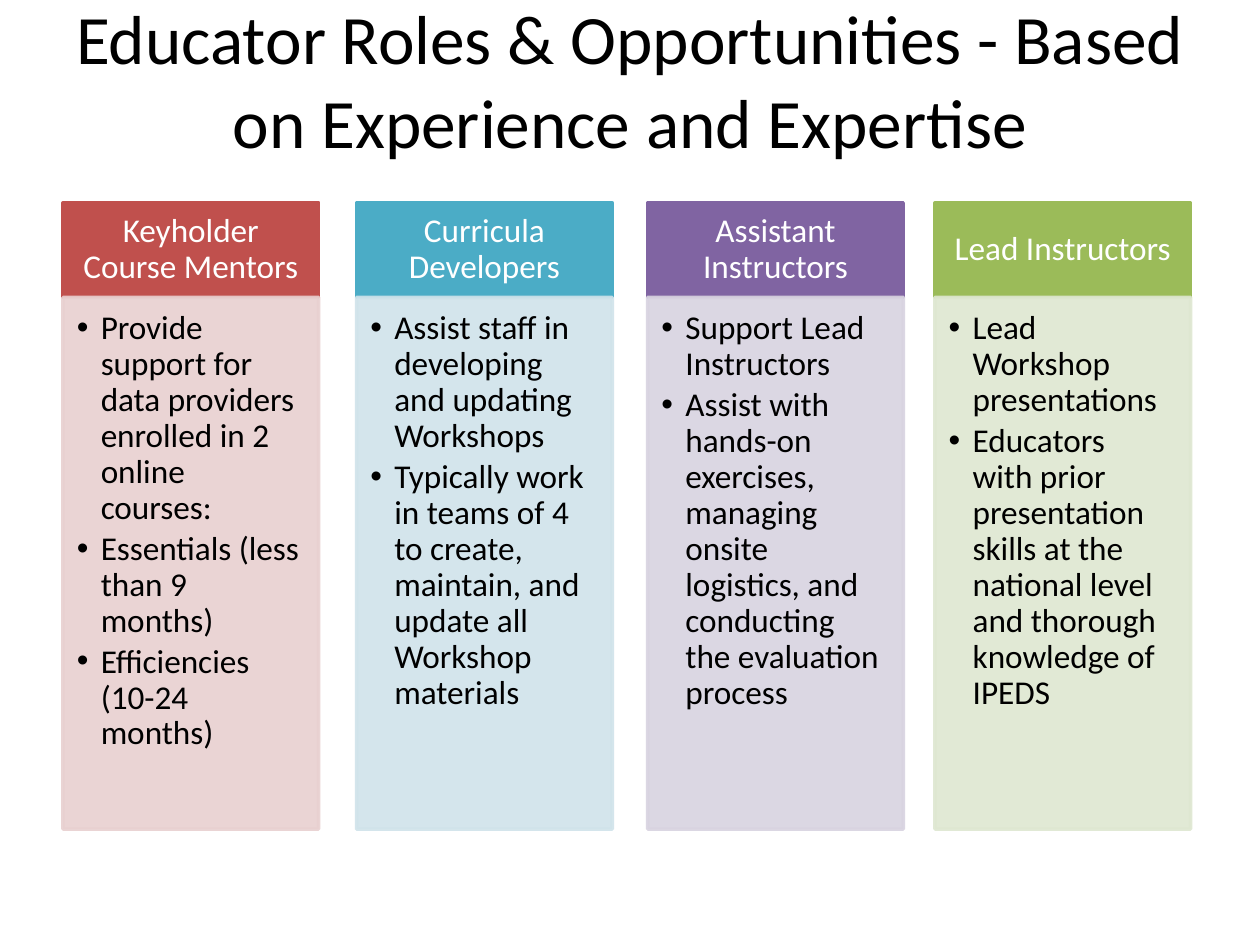
from lxml import etree
from pptx import Presentation
from pptx import util as u
from pptx.dml.color import RGBColor
from pptx.enum import shapes, text
from pptx.oxml.ns import qn

FONT = "Calibri"
COLUMN_WIDTH, HEADER_HEIGHT, BODY_HEIGHT = 2.03, 0.75, 4.22
TOP = 1.61
ROLES = [
    (0.5, "Keyholder Course Mentors", "C0504D", "E8D0D0",
     ["Provide support for data providers enrolled in 2 online courses:",
      "Essentials (less than 9 months)",
      "Efficiencies (10-24 months)"]),
    (2.83, "Curricula Developers", "4BACC6", "D0E3EA",
     ["Assist staff in developing and updating Workshops",
      "Typically work in teams of 4 to create, maintain, and update all "
      "Workshop materials"]),
    (5.14, "Assistant Instructors", "8064A2", "D8D3E0",
     ["Support Lead Instructors",
      "Assist with hands-on exercises, managing onsite logistics, and "
      "conducting the evaluation process"]),
    (7.42, "Lead Instructors", "9BBB59", "DEE7D1",
     ["Lead Workshop presentations",
      "Educators with prior presentation skills at the national level and "
      "thorough knowledge of IPEDS"]),
]


def color(value):
    return RGBColor.from_string(value)


def set_alpha(fill_parent, percent):
    for node in fill_parent.iter(qn("a:srgbClr")):
        etree.SubElement(node, qn("a:alpha")).set("val", str(percent * 1000))


def add_bullet(para, indent):
    properties = para._p.get_or_add_pPr()
    properties.set("marL", str(u.Inches(indent)))
    properties.set("indent", str(-u.Inches(indent)))
    etree.SubElement(properties, qn("a:buFont")).set("typeface", "Arial")
    etree.SubElement(properties, qn("a:buChar")).set("char", "•")


def write_text(box, lines, size, ink="000000", align=text.PP_ALIGN.LEFT,
               anchor=text.MSO_ANCHOR.TOP, margins=(0.1, 0.05, 0.1, 0.05),
               spacing=1.0, after=0, bullets=False):
    frame = box.text_frame
    frame.word_wrap = True
    frame.vertical_anchor = anchor
    (frame.margin_left, frame.margin_top,
     frame.margin_right, frame.margin_bottom) = map(u.Inches, margins)
    for index, line in enumerate(lines):
        para = frame.add_paragraph() if index else frame.paragraphs[0]
        if bullets:
            para.level = 1
            add_bullet(para, 0.19)
        para.alignment = align
        para.line_spacing = spacing
        para.space_after = u.Pt(after)
        span = para.add_run()
        span.text = line
        span.font.name = FONT
        span.font.size = u.Pt(size)
        span.font.color.rgb = color(ink)


def add_panel(page, left, top, height, fill, opacity=100):
    panel = page.shapes.add_shape(
        shapes.MSO_SHAPE.RECTANGLE, u.Inches(left), u.Inches(top),
        u.Inches(COLUMN_WIDTH), u.Inches(height))
    panel.shadow.inherit = False
    panel.fill.solid()
    panel.fill.fore_color.rgb = color(fill)
    panel.line.color.rgb = color(fill)
    panel.line.width = u.Pt(2)
    if opacity < 100:
        set_alpha(panel._element.spPr, opacity)
    return panel


def add_title(page, title):
    box = page.shapes.add_textbox(
        u.Inches(0.5), u.Inches(0), u.Inches(9), u.Inches(1.25))
    write_text(box, [title], 39.6, align=text.PP_ALIGN.CENTER,
               anchor=text.MSO_ANCHOR.MIDDLE)


def add_role(page, left, name, strong, pale, duties):
    header = add_panel(page, left, TOP, HEADER_HEIGHT, strong)
    write_text(header, [name], 19, ink="FFFFFF", align=text.PP_ALIGN.CENTER,
               anchor=text.MSO_ANCHOR.MIDDLE, spacing=0.9,
               margins=(0.15, 0.08, 0.15, 0.08))
    body = add_panel(page, left, TOP + HEADER_HEIGHT, BODY_HEIGHT, pale, 90)
    write_text(body, duties, 19, spacing=0.9, after=2.85, bullets=True,
               margins=(0.11, 0.11, 0.15, 0.17))


def main():
    deck = Presentation()
    deck.slide_width, deck.slide_height = u.Inches(10), u.Inches(7.5)
    page = deck.slides.add_slide(deck.slide_layouts[6])
    add_title(page, "Educator Roles & Opportunities - Based on Experience "
                    "and Expertise")
    for role in ROLES:
        add_role(page, *role)
    deck.save("out.pptx")


if __name__ == "__main__":
    main()
